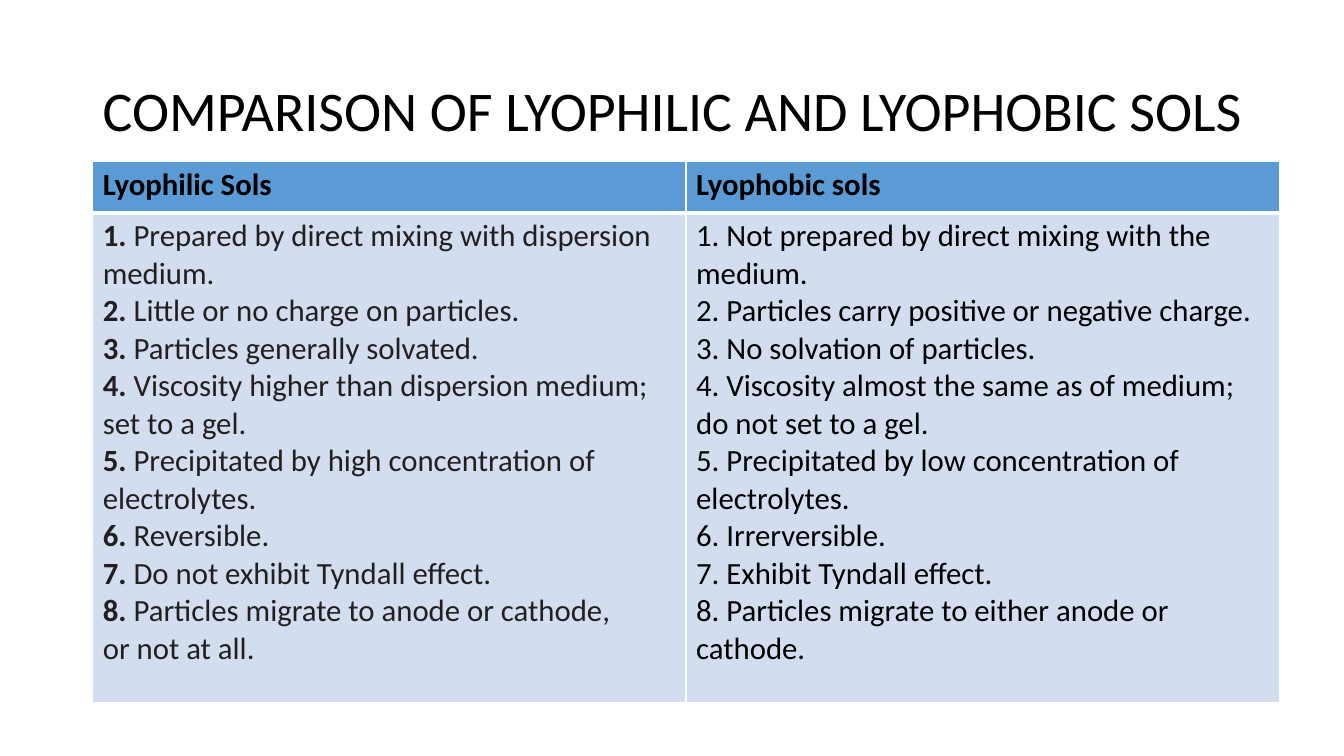
from pptx import Presentation
from pptx.dml.color import RGBColor
from pptx.enum.text import MSO_ANCHOR
from pptx.oxml import parse_xml
from pptx.oxml.ns import nsdecls
from pptx.util import Pt

PX = 9144  # EMU in one px, 100 px to the inch
MIDDLE = MSO_ANCHOR.MIDDLE
FONT = "Calibri"
COLORS = {
    "black": "000000",
    "ink": "231F20",
    "white": "FFFFFF",
    "header": "5B9BD5",
    "body": "D2DEEF",
}
TITLE = "COMPARISON OF LYOPHILIC AND LYOPHOBIC SOLS"
TITLE_BOX = (92, 40, 1150, 145)
TABLE_BOX = (92, 160, 1177, 537)
HEADER_HEIGHT = 51
HEADINGS = ["Lyophilic Sols", "Lyophobic sols"]
LYOPHILIC = [
    ("1. ", "Prepared by direct mixing with dispersion"),
    ("", "medium."),
    ("2. ", "Little or no charge on particles."),
    ("3. ", "Particles generally solvated."),
    ("4. ", "Viscosity higher than dispersion medium; set to a gel."),
    ("5. ", "Precipitated by high concentration of"),
    ("", "electrolytes."),
    ("6. ", "Reversible."),
    ("7. ", "Do not exhibit Tyndall effect."),
    ("8. ", "Particles migrate to anode or cathode,"),
    ("", "or not at all."),
]
LYOPHOBIC = [
    ("", "1. Not prepared by direct mixing with the medium."),
    ("", "2. Particles carry positive or negative charge."),
    ("", "3. No solvation of particles."),
    ("", "4. Viscosity almost the same as of medium; do not set to a gel."),
    ("", "5. Precipitated by low concentration of"),
    ("", "electrolytes."),
    ("", "6. Irrerversible."),
    ("", "7. Exhibit Tyndall effect."),
    ("", "8. Particles migrate to either anode or cathode."),
]


def color(name):
    return RGBColor.from_string(COLORS[name])


def add_span(para, text, size, color_name, bold=False):
    span = para.add_run()
    span.text = text
    for key, value in {"name": FONT, "size": Pt(size), "bold": bold}.items():
        setattr(span.font, key, value)
    span.font.color.rgb = color(color_name)


def add_title(page, box):
    frame = page.shapes.add_textbox(*(length * PX for length in box)).text_frame
    # No right inset, so that the long line stays on one row
    settings = {"word_wrap": True, "vertical_anchor": MIDDLE, "margin_right": 0}
    for key, value in settings.items():
        setattr(frame, key, value)
    para = frame.paragraphs[0]
    para.line_spacing = 0.9
    add_span(para, TITLE, 40, "black")


def style_cell(cell, fill_name, border_points):
    """Fill the cell and rule its sides, given as a dict of side to points."""
    cell.fill.solid()
    cell.fill.fore_color.rgb = color(fill_name)
    properties = cell._tc.get_or_add_tcPr()
    for index, (side, points) in enumerate(border_points.items()):
        properties.insert(index, parse_xml(
            f'<a:ln{side} {nsdecls("a")} w="{Pt(points)}"><a:solidFill>'
            f'<a:srgbClr val="{COLORS["white"]}"/></a:solidFill></a:ln{side}>'))


def write_cell(cell, lines, color_name, bold=False):
    """Write one paragraph per (bold number, text) pair."""
    frame = cell.text_frame
    for index, (number, text) in enumerate(lines):
        para = frame.add_paragraph() if index else frame.paragraphs[0]
        if number:
            add_span(para, number, 22, color_name, True)
        add_span(para, text, 22, color_name, bold)


def add_comparison(page, box):
    left, top, width, height = (length * PX for length in box)
    table = page.shapes.add_table(2, 2, left, top, width, height).table
    table.rows[0].height = HEADER_HEIGHT * PX
    table.rows[1].height = height - HEADER_HEIGHT * PX
    columns = zip(HEADINGS, (LYOPHILIC, LYOPHOBIC), ("ink", "black"))
    for index, (heading, lines, ink) in enumerate(columns):
        header, body = table.cell(0, index), table.cell(1, index)
        style_cell(header, "header", {"L": 1, "R": 1, "T": 1, "B": 3})
        style_cell(body, "body", {"L": 1, "R": 1, "T": 3, "B": 1})
        write_cell(header, [("", heading)], "black", True)
        write_cell(body, lines, ink)


def main():
    deck = Presentation()
    deck.slide_width, deck.slide_height = 1333 * PX, 750 * PX
    page = deck.slides.add_slide(deck.slide_layouts[6])
    add_title(page, TITLE_BOX)
    add_comparison(page, TABLE_BOX)
    deck.save("out.pptx")


if __name__ == "__main__":
    main()
